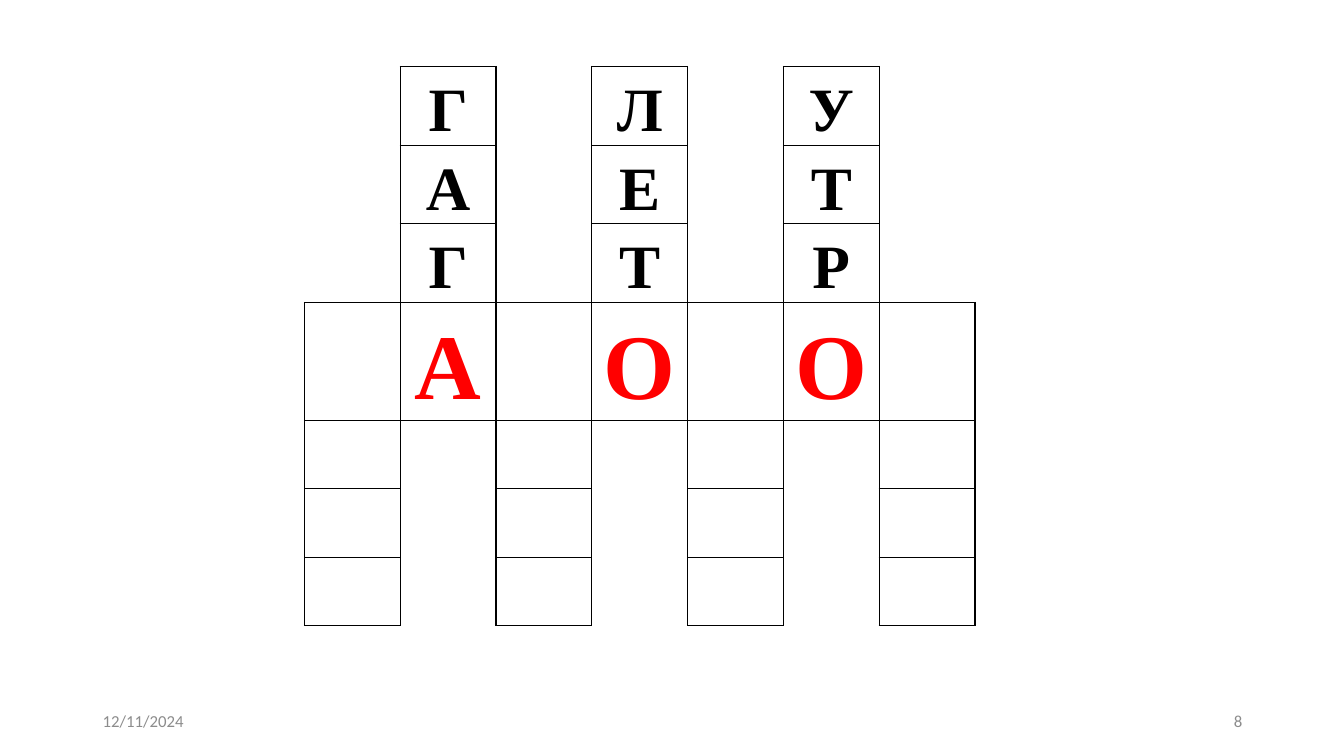
from lxml import etree
from pptx import Presentation
from pptx.dml.color import RGBColor
from pptx.enum.text import MSO_ANCHOR, PP_ALIGN
from pptx.oxml.ns import qn
from pptx.util import Inches, Pt

LEFT, CENTER, RIGHT = PP_ALIGN.LEFT, PP_ALIGN.CENTER, PP_ALIGN.RIGHT
MIDDLE = MSO_ANCHOR.MIDDLE

# Content: a dot is a gap in the crossword, an underscore an empty square
CROSSWORD = [
    ".Г.Л.У.",
    ".А.Е.Т.",
    ".Г.Т.Р.",
    "_А_О_О_",
    "_._._._",
    "_._._._",
    "_._._._",
]
KEYWORD_ROW = 3
ROW_HEIGHTS = [0.78] * 3 + [1.17] + [0.68] * 3
COLUMN_WIDTH = 0.95
GRID_LEFT, GRID_TOP = 3.02, 0.66
FOOTERS = [("12/11/2024", 0.92, LEFT), ("8", 9.42, RIGHT)]
# Size, line height and colour of the letters
LETTER_STYLE = (44, 56, "000000")
KEYWORD_STYLE = (66, 84, "FF0000")


def rgb(color):
    return RGBColor.from_string(color)


def write(frame, text, *, font, size, color, align, bold=False, spacing=None):
    paragraph = frame.paragraphs[0]
    paragraph.alignment = align
    paragraph.line_spacing = spacing
    paragraph.space_before = paragraph.space_after = Pt(0)
    run = paragraph.add_run()
    run.text = text
    run.font.name = font
    run.font.size = Pt(size)
    run.font.bold = bold
    run.font.color.rgb = rgb(color)


def is_square(row, col):
    inside = 0 <= row < len(CROSSWORD) and 0 <= col < len(CROSSWORD[0])
    return inside and CROSSWORD[row][col] != "."


def draw_borders(cell, row, col):
    """Line every edge that touches a crossword square."""
    neighbours = {"a:lnL": (row, col - 1), "a:lnR": (row, col + 1),
                  "a:lnT": (row - 1, col), "a:lnB": (row + 1, col)}
    properties = cell._tc.get_or_add_tcPr()
    for tag, neighbour in neighbours.items():
        edge = etree.SubElement(properties, qn(tag), w=str(Pt(1)))
        if is_square(row, col) or is_square(*neighbour):
            fill = etree.SubElement(edge, qn("a:solidFill"))
            etree.SubElement(fill, qn("a:srgbClr"), val="000000")
        else:
            etree.SubElement(edge, qn("a:noFill"))


prs = Presentation()
prs.slide_width, prs.slide_height = Inches(13.33), Inches(7.5)
slide = prs.slides.add_slide(prs.slide_layouts[6])

# Date and slide number
for text, left, align in FOOTERS:
    footer = slide.shapes.add_textbox(Inches(left), Inches(6.95), Inches(3), Inches(0.4))
    footer.text_frame.word_wrap = True
    footer.text_frame.vertical_anchor = MIDDLE
    write(footer.text_frame, text, font="Calibri", size=12, color="8C8C8C", align=align)

# Crossword grid
row_count, column_count = len(CROSSWORD), len(CROSSWORD[0])
grid = slide.shapes.add_table(
    row_count, column_count, Inches(GRID_LEFT), Inches(GRID_TOP),
    Inches(COLUMN_WIDTH * column_count), Inches(sum(ROW_HEIGHTS))).table
grid.first_row = grid.horz_banding = False
for column in grid.columns:
    column.width = Inches(COLUMN_WIDTH)
for grid_row, height in zip(grid.rows, ROW_HEIGHTS):
    grid_row.height = Inches(height)

# Squares and letters
for row, letters in enumerate(CROSSWORD):
    size, line_height, color = KEYWORD_STYLE if row == KEYWORD_ROW else LETTER_STYLE
    for col, letter in enumerate(letters):
        square = grid.cell(row, col)
        draw_borders(square, row, col)
        square.fill.background()
        if letter in "._":
            continue
        square.margin_left = square.margin_right = Inches(0.07)
        square.margin_top = square.margin_bottom = 0
        write(square.text_frame, letter, font="Times New Roman", size=size, color=color,
              align=CENTER, bold=True, spacing=Pt(line_height))

# Gaps above and below the keyword become single cells
for col in range(column_count):
    top = KEYWORD_ROW + 1 if is_square(0, col) else 0
    grid.cell(top, col).merge(grid.cell(top + 2, col))

prs.save("out.pptx")
